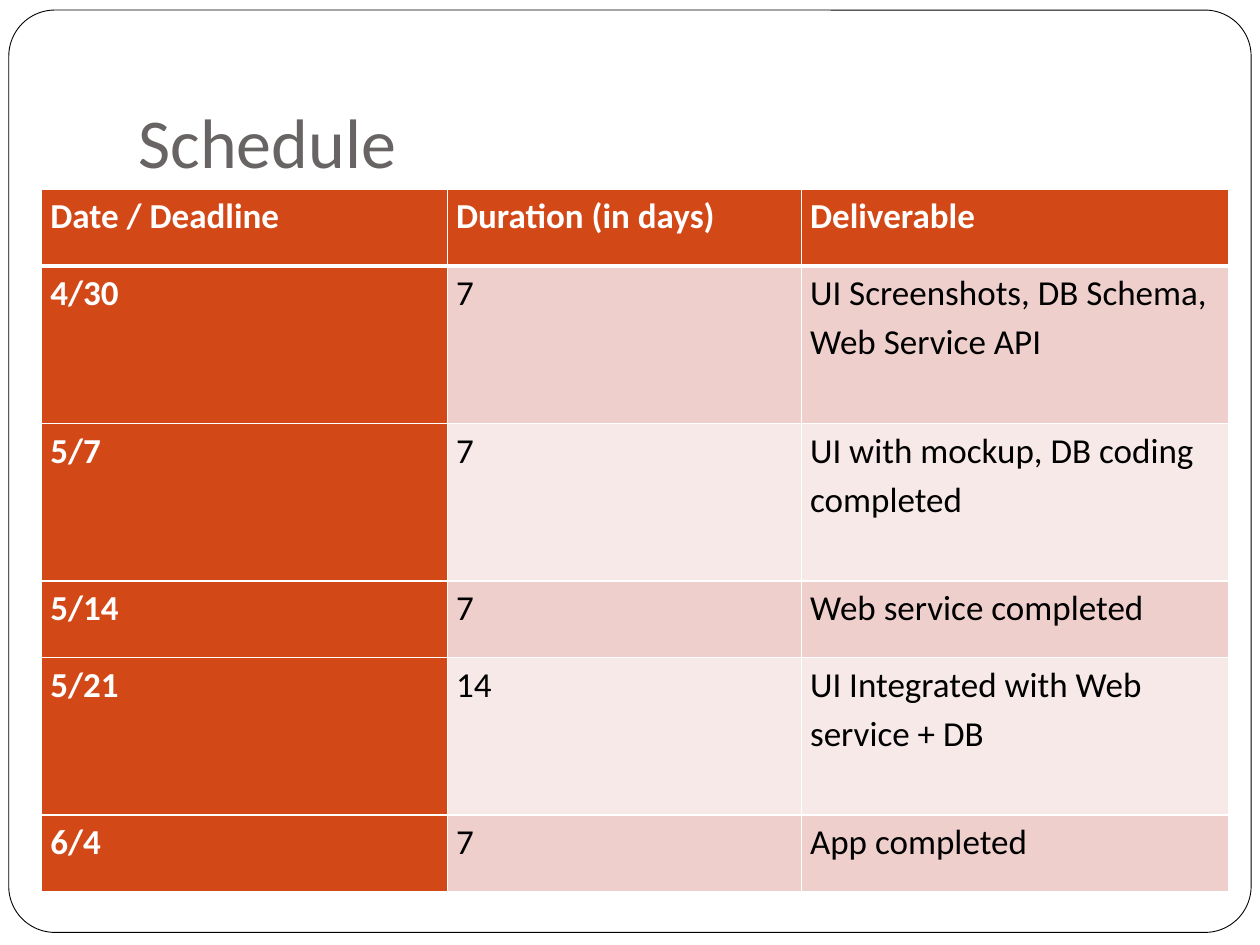
import dataclasses

import lxml.etree
import pptx
import pptx.dml.color
import pptx.enum.shapes
import pptx.enum.text
import pptx.oxml.ns
import pptx.util
from pptx.util import Inches


@dataclasses.dataclass(frozen=True)
class Theme:
    font: str = "Calibri"
    title_size: int = 40
    table_size: int = 20
    frame_line: float = 0.5
    rule: int = 1
    header_rule: int = 3
    white: str = "FFFFFF"
    black: str = "000000"
    title: str = "696464"
    accent: str = "D34817"
    bands: tuple = ("EFCFCC", "F7E9E8")


class SlideBuilder:
    """Draws the elements of a slide in one theme."""

    def __init__(self, slide, theme):
        self.slide = slide
        self.theme = theme

    def color(self, value):
        return pptx.dml.color.RGBColor.from_string(value)

    def style(self, para, size, color, bold=False):
        for span in para.runs:
            span.font.name = self.theme.font
            span.font.size = pptx.util.Pt(size)
            span.font.bold = bold
            span.font.color.rgb = self.color(color)

    def frame(self, left, top, width, height, rounding):
        shape = self.slide.shapes.add_shape(
            pptx.enum.shapes.MSO_SHAPE.ROUNDED_RECTANGLE,
            Inches(left), Inches(top), Inches(width), Inches(height))
        shape.adjustments[0] = rounding
        shape.shadow.inherit = False
        shape.fill.solid()
        shape.fill.fore_color.rgb = self.color(self.theme.white)
        shape.line.color.rgb = self.color(self.theme.black)
        shape.line.width = pptx.util.Pt(self.theme.frame_line)

    def title(self, text, left, top, width, height):
        box = self.slide.shapes.add_textbox(
            Inches(left), Inches(top), Inches(width), Inches(height))
        frame = box.text_frame
        frame.word_wrap = True
        frame.vertical_anchor = pptx.enum.text.MSO_ANCHOR.BOTTOM
        frame.margin_bottom = Inches(0.1)
        frame.text = text
        self.style(frame.paragraphs[0], self.theme.title_size, self.theme.title)

    def borders(self, cell, top, bottom):
        properties = cell._tc.get_or_add_tcPr()
        name = pptx.oxml.ns.qn
        rule = self.theme.rule
        for side, width in (("L", rule), ("R", rule), ("T", top), ("B", bottom)):
            line = lxml.etree.SubElement(
                properties, name(f"a:ln{side}"), w=str(pptx.util.Pt(width)))
            fill = lxml.etree.SubElement(line, name("a:solidFill"))
            lxml.etree.SubElement(fill, name("a:srgbClr"), val=self.theme.white)

    def cell(self, cell, text, row, column):
        theme = self.theme
        heading = row == 0 or column == 0
        self.borders(cell,
                     theme.header_rule if row == 1 else theme.rule,
                     theme.header_rule if row == 0 else theme.rule)
        cell.fill.solid()
        cell.fill.fore_color.rgb = self.color(
            theme.accent if heading else theme.bands[(row - 1) % 2])
        cell.margin_left = cell.margin_right = Inches(0.07)
        cell.margin_top = cell.margin_bottom = 0
        cell.text_frame.text = text
        para = cell.text_frame.paragraphs[0]
        para.line_spacing = 1.15
        self.style(para, theme.table_size,
                   theme.white if heading else theme.black, heading)

    def table(self, rows, left, top, widths, heights):
        table = self.slide.shapes.add_table(
            len(rows), len(widths), Inches(left), Inches(top),
            Inches(sum(widths)), Inches(sum(heights))).table
        for column, width in zip(table.columns, widths):
            column.width = Inches(width)
        for table_row, height in zip(table.rows, heights):
            table_row.height = Inches(height)
        for row, texts in enumerate(rows):
            for column, text in enumerate(texts):
                self.cell(table.cell(row, column), text, row, column)


def main():
    deck = pptx.Presentation()
    deck.slide_width, deck.slide_height = Inches(10), Inches(7.5)
    page = SlideBuilder(deck.slides.add_slide(deck.slide_layouts[6]), Theme())
    page.frame(0.07, 0.08, 9.86, 7.32, 0.05)
    page.title("Schedule", 1, 0.3, 8.5, 1.25)
    schedule = [
        ("Date / Deadline", "Duration (in days)", "Deliverable"),
        ("4/30", "7", "UI Screenshots, DB Schema, Web Service API"),
        ("5/7", "7", "UI with mockup, DB coding completed"),
        ("5/14", "7", "Web service completed"),
        ("5/21", "14", "UI Integrated with Web service + DB"),
        ("6/4", "7", "App completed"),
    ]
    short, tall = 0.61, 1.25
    page.table(schedule, 0.33, 1.5, (3.22, 2.81, 3.39),
               (short, tall, tall, short, tall, short))
    deck.save("out.pptx")


if __name__ == "__main__":
    main()
